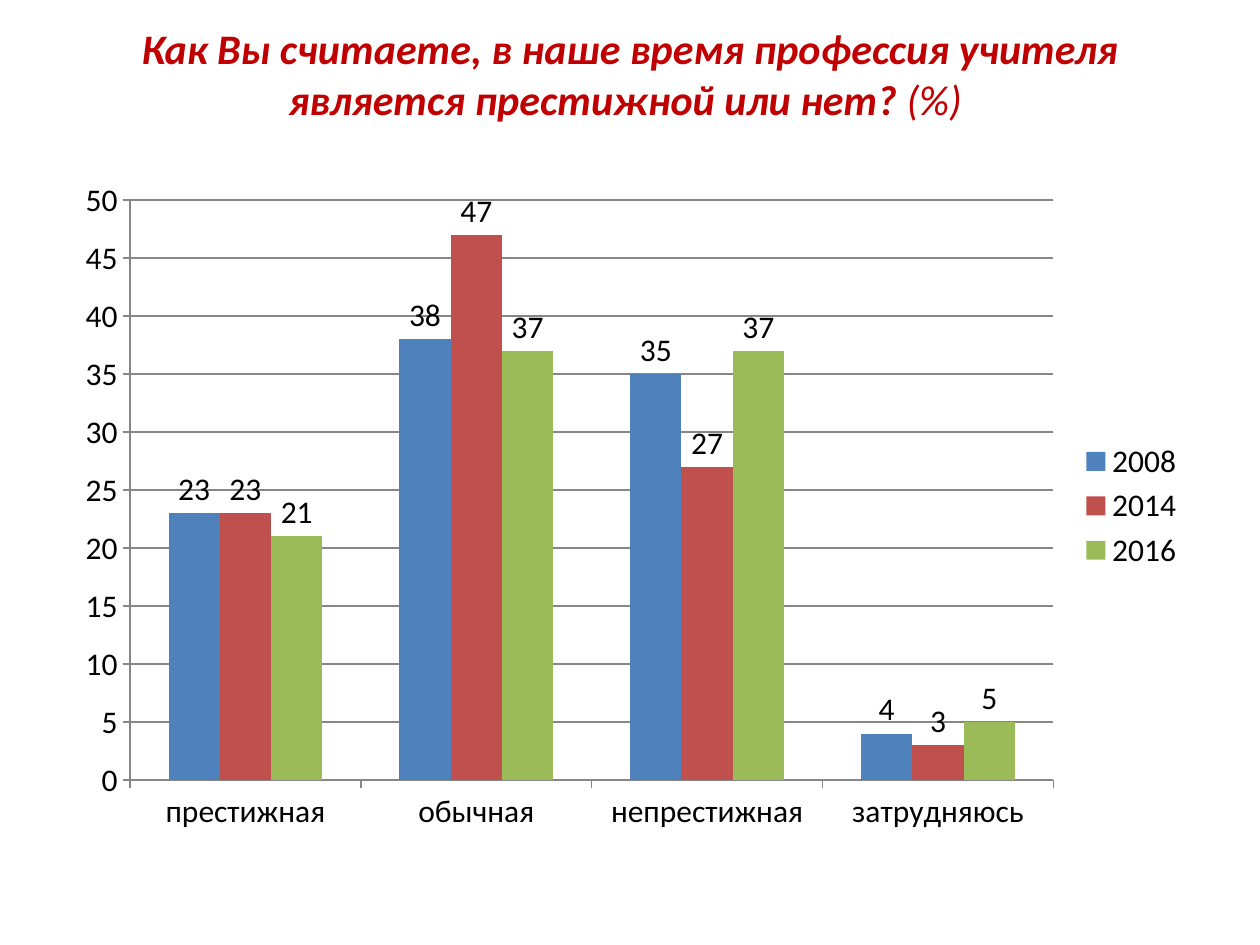
from pptx import Presentation
from pptx.chart.data import CategoryChartData
from pptx.dml.color import RGBColor
from pptx.enum.chart import XL_CHART_TYPE, XL_LABEL_POSITION, XL_LEGEND_POSITION, XL_TICK_MARK
from pptx.enum.text import MSO_ANCHOR, PP_ALIGN
from pptx.util import Inches, Pt

COLUMNS = XL_CHART_TYPE.COLUMN_CLUSTERED
OUTSIDE_END = XL_LABEL_POSITION.OUTSIDE_END
LEGEND_RIGHT = XL_LEGEND_POSITION.RIGHT
TICK_OUTSIDE = XL_TICK_MARK.OUTSIDE
MIDDLE, CENTER = MSO_ANCHOR.MIDDLE, PP_ALIGN.CENTER

FONT = "Calibri"
TITLE_COLOR, TEXT_COLOR, AXIS_COLOR = "C00000", "000000", "868686"
QUESTION = "Как Вы считаете, в наше время профессия учителя является престижной или нет? "
UNIT = "(%) "
ANSWERS = ["престижная", "обычная", "непрестижная", "затрудняюсь"]
YEARS = [
    ("2008", [23, 38, 35, 4], "4F81BD"),
    ("2014", [23, 47, 27, 3], "C0504D"),
    ("2016", [21, 37, 37, 5], "9BBB59"),
]

SLIDE_WIDTH, SLIDE_HEIGHT = Inches(10), Inches(7.5)
MARGIN = Inches(0.5)
CONTENT_WIDTH = SLIDE_WIDTH - 2 * MARGIN
TITLE_TOP, TITLE_HEIGHT = Inches(0.3), Inches(0.56)
CHART_TOP, CHART_HEIGHT = Inches(1.33), Inches(5.37)


def color(value):
    return RGBColor.from_string(value)


def format_font(font, size, fill, bold=False, italic=False):
    font.name, font.size, font.bold, font.italic = FONT, Pt(size), bold, italic
    font.color.rgb = color(fill)


def add_text(paragraph, text, **style):
    run = paragraph.add_run()
    run.text = text
    format_font(run.font, **style)


def format_axis(axis):
    axis.major_tick_mark = TICK_OUTSIDE
    axis.format.line.color.rgb = color(AXIS_COLOR)


def add_title(slide):
    title = slide.shapes.title
    title.left, title.top = MARGIN, TITLE_TOP
    title.width, title.height = CONTENT_WIDTH, TITLE_HEIGHT
    frame = title.text_frame
    frame.word_wrap = True
    frame.vertical_anchor = MIDDLE
    paragraph = frame.paragraphs[0]
    paragraph.alignment = CENTER
    for text, bold in ((QUESTION, True), (UNIT, False)):
        add_text(paragraph, text, size=24, fill=TITLE_COLOR, bold=bold, italic=True)


def add_survey_chart(slide):
    data = CategoryChartData(number_format="General")
    data.categories = ANSWERS
    for year, values, _ in YEARS:
        data.add_series(year, values)
    chart = slide.shapes.add_chart(
        COLUMNS, MARGIN, CHART_TOP, CONTENT_WIDTH, CHART_HEIGHT, data
    ).chart
    format_font(chart.font, size=18, fill=TEXT_COLOR)
    chart.has_title = False
    chart.has_legend = True
    chart.legend.position = LEGEND_RIGHT
    chart.legend.include_in_layout = False

    format_axis(chart.category_axis)
    value_axis = chart.value_axis
    format_axis(value_axis)
    value_axis.minimum_scale, value_axis.maximum_scale, value_axis.major_unit = 0, 50, 5
    value_axis.major_gridlines.format.line.color.rgb = color(AXIS_COLOR)

    plot = chart.plots[0]
    plot.gap_width, plot.overlap, plot.vary_by_categories = 150, 0, False
    for series, (_, _, fill) in zip(plot.series, YEARS):
        series.format.fill.solid()
        series.format.fill.fore_color.rgb = color(fill)
        labels = series.data_labels
        labels.show_value = True
        labels.position = OUTSIDE_END


def main():
    presentation = Presentation()
    presentation.slide_width, presentation.slide_height = SLIDE_WIDTH, SLIDE_HEIGHT
    title_only = presentation.slide_layouts[5]
    slide = presentation.slides.add_slide(title_only)
    add_title(slide)
    add_survey_chart(slide)
    presentation.save("out.pptx")


if __name__ == "__main__":
    main()
